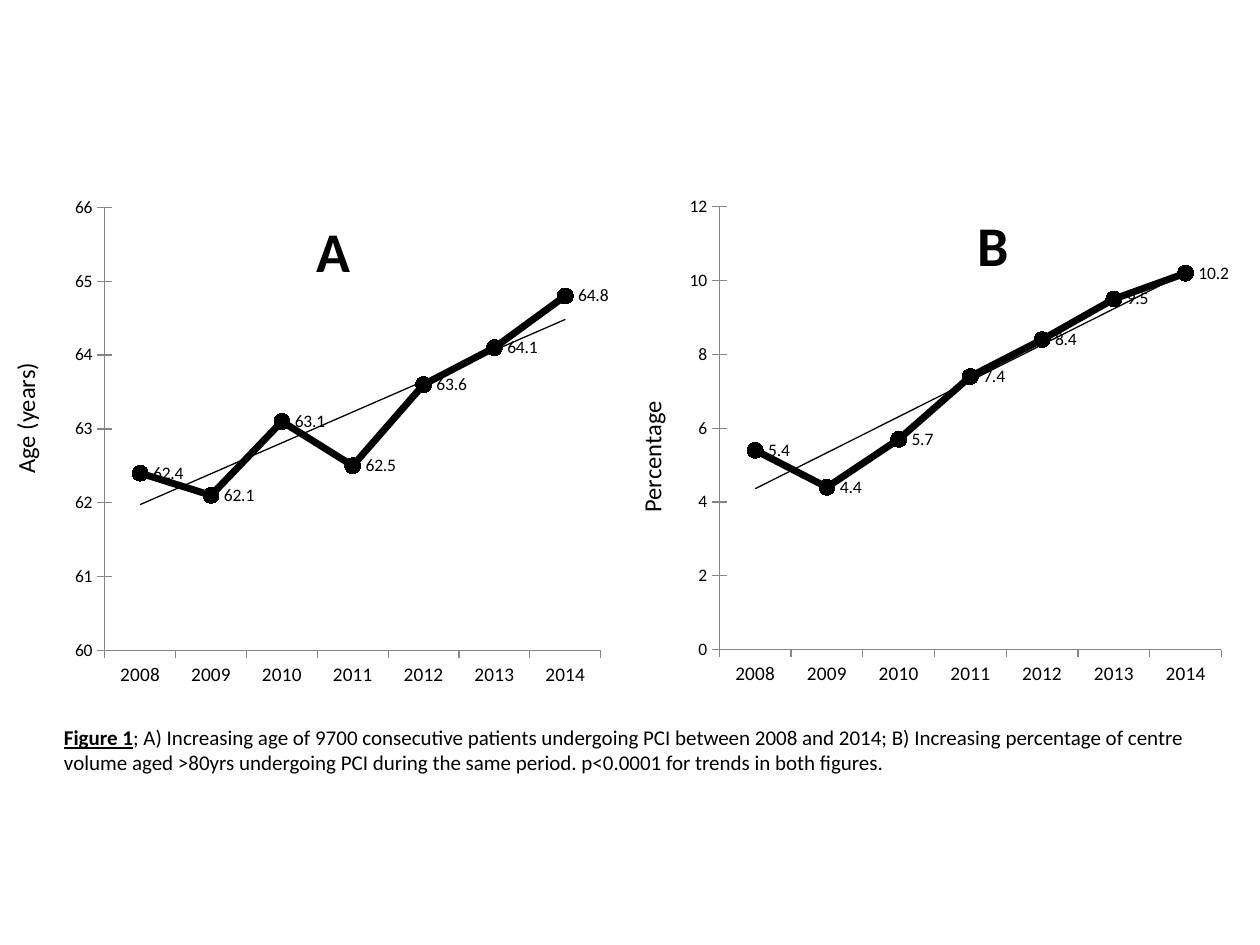
from lxml import etree
from pptx import Presentation
from pptx.chart.data import CategoryChartData
from pptx.dml.color import RGBColor
from pptx.enum.chart import XL_CHART_TYPE, XL_LABEL_POSITION, XL_MARKER_STYLE, XL_TICK_MARK
from pptx.enum.text import PP_ALIGN
from pptx.oxml import parse_xml
from pptx.oxml.ns import nsdecls, qn
from pptx.util import Inches, Pt

LINE_MARKERS = XL_CHART_TYPE.LINE_MARKERS
CIRCLE = XL_MARKER_STYLE.CIRCLE
RIGHT = XL_LABEL_POSITION.RIGHT
CROSS, OUTSIDE = XL_TICK_MARK.CROSS, XL_TICK_MARK.OUTSIDE
LEFT, CENTER = PP_ALIGN.LEFT, PP_ALIGN.CENTER

THEME = {
    "font": "Calibri", "ink": RGBColor(0, 0, 0), "axis": RGBColor(0x86, 0x86, 0x86),
    "panel": 32, "axis_title": 14, "caption": 12, "years": 11, "values": 10,
    "line": 4, "trend": 0.75, "marker": 9,
}

YEARS = range(2008, 2015)
PANELS = [
    {"letter": "A", "series": "Series 1", "values": [62.4, 62.1, 63.1, 62.5, 63.6, 64.1, 64.8],
     "scale": (60, 66, 1), "box": (0.2, 1.33, 4.86, 4.51),
     "plot": (0.13, 0.07, 0.81, 0.78), "letter_at": (0.46, 0.06),
     "axis_title": "Age (years)", "axis_box": (-0.64, 3.15, 1.69, 0.34), "align": CENTER},
    {"letter": "B", "series": "B", "values": [5.4, 4.4, 5.7, 7.4, 8.4, 9.5, 10.2],
     "scale": (0, 12, 2), "box": (5.07, 1.33, 4.92, 4.45),
     "plot": (0.13, 0.07, 0.81, 0.79), "letter_at": (0.53, 0.05),
     "axis_title": "Percentage", "axis_box": (4.42, 3.24, 1.51, 0.34), "align": LEFT},
]
CAPTION_BOX = (0.41, 5.7, 9.33, 0.5)
CAPTION = [
    ("Figure 1", True),
    ("; A) Increasing age of 9700 consecutive patients undergoing PCI between 2008 and 2014; "
     "B) Increasing percentage of centre volume aged >80yrs undergoing PCI during the same "
     "period. p<0.0001 for trends in both figures.", False),
]


def style_font(font, size, bold=False):
    font.name = THEME["font"]
    font.size = Pt(size)
    font.bold = bold
    font.color.rgb = THEME["ink"]


def add_text(slide, box, runs, size, align=LEFT, rotation=0):
    holder = slide.shapes.add_textbox(*map(Inches, box))
    holder.rotation = rotation
    holder.text_frame.word_wrap = True
    paragraph = holder.text_frame.paragraphs[0]
    paragraph.alignment = align
    for words, emphasis in runs:
        run = paragraph.add_run()
        run.text = words
        style_font(run.font, size, emphasis)
        run.font.underline = emphasis


def set_layout(parent, index, fractions, inner=False):
    for old in parent.findall(qn("c:layout")):
        parent.remove(old)
    layout = parse_xml(f"<c:layout {nsdecls('c')}><c:manualLayout/></c:layout>")
    settings = [("layoutTarget", "inner")] if inner else []
    settings += [("xMode", "edge"), ("yMode", "edge"), *zip("xywh", fractions)]
    for tag, value in settings:
        etree.SubElement(layout[0], qn(f"c:{tag}")).set("val", str(value))
    parent.insert(index, layout)


def add_trend(series):
    trend = parse_xml(
        f"<c:trendline {nsdecls('c', 'a')}><c:spPr><a:ln w=\"{Pt(THEME['trend'])}\">"
        f"<a:solidFill><a:srgbClr val=\"{THEME['ink']}\"/></a:solidFill></a:ln></c:spPr>"
        '<c:trendlineType val="linear"/><c:dispRSqr val="0"/><c:dispEq val="0"/></c:trendline>')
    series._element.find(qn("c:cat")).addprevious(trend)


def style_series(series):
    series.smooth = False
    series.format.line.color.rgb = THEME["ink"]
    series.format.line.width = Pt(THEME["line"])
    series.marker.style = CIRCLE
    series.marker.size = THEME["marker"]
    for part in (series.marker.format.fill, series.marker.format.line.fill):
        part.solid()
        part.fore_color.rgb = THEME["ink"]
    labels = series.data_labels
    labels.show_value = True
    labels.position = RIGHT
    style_font(labels.font, THEME["values"])
    add_trend(series)


def style_axis(axis, tick, size):
    axis.has_major_gridlines = False
    axis.major_tick_mark = tick
    axis.format.line.color.rgb = THEME["axis"]
    style_font(axis.tick_labels.font, size)


def add_panel(slide, panel):
    data = CategoryChartData()
    data.categories = YEARS
    data.add_series(panel["series"], panel["values"])
    chart = slide.shapes.add_chart(LINE_MARKERS, *map(Inches, panel["box"]), data).chart
    style_font(chart.font, THEME["values"])
    chart.has_legend = False
    chart.plots[0].vary_by_categories = False

    title = chart.chart_title
    run = title.text_frame.paragraphs[0].add_run()
    run.text = panel["letter"]
    style_font(run.font, THEME["panel"], True)
    set_layout(title._element, 1, panel["letter_at"])
    title._element.find(qn("c:overlay")).set("val", "1")
    set_layout(chart._chartSpace.chart.plotArea, 0, panel["plot"], inner=True)

    style_axis(chart.category_axis, OUTSIDE, THEME["years"])
    style_axis(chart.value_axis, CROSS, THEME["values"])
    axis = chart.value_axis
    axis.minimum_scale, axis.maximum_scale, axis.major_unit = panel["scale"]
    axis.tick_labels.number_format = "General"
    axis.tick_labels.number_format_is_linked = False
    style_series(chart.plots[0].series[0])

    add_text(slide, panel["axis_box"], [(panel["axis_title"], False)],
             THEME["axis_title"], panel["align"], 270)


def main():
    deck = Presentation()
    deck.slide_width, deck.slide_height = Inches(10), Inches(7.5)
    slide = deck.slides.add_slide(deck.slide_layouts[6])
    for panel in PANELS:
        add_panel(slide, panel)
    add_text(slide, CAPTION_BOX, CAPTION, THEME["caption"])
    deck.save("out.pptx")


if __name__ == "__main__":
    main()
